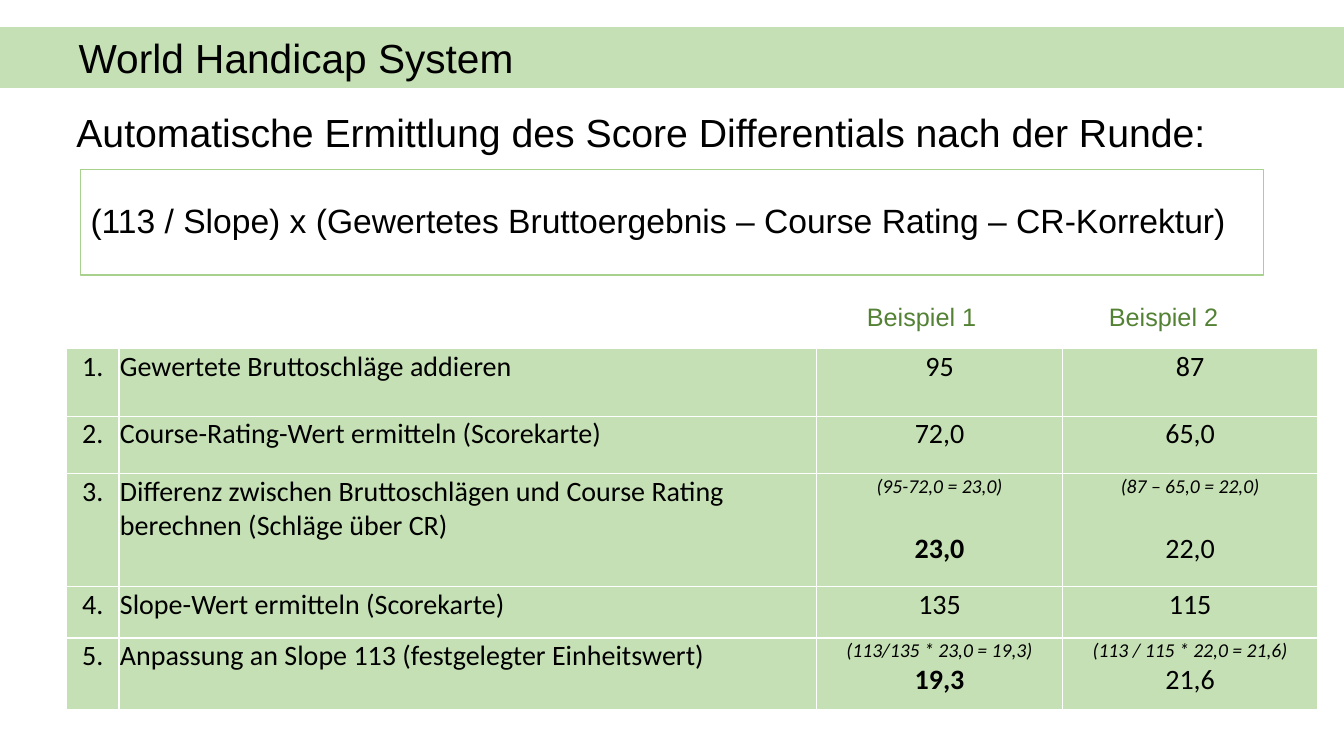
"""Build the World Handicap System slide with the score differential table."""
import dataclasses

import pptx
import pptx.dml.color
import pptx.enum.shapes
import pptx.enum.text
import pptx.oxml
import pptx.oxml.ns
import pptx.util

Inches = pptx.util.Inches
Pt = pptx.util.Pt
ALIGN = pptx.enum.text.PP_ALIGN
ANCHOR = pptx.enum.text.MSO_ANCHOR


@dataclasses.dataclass(frozen=True)
class Theme:
    heading_font: str = "Arial"
    table_font: str = "Calibri"
    black: str = "000000"
    white: str = "FFFFFF"
    pale_green: str = "C5E0B4"
    frame_green: str = "A9D18E"
    dark_green: str = "548235"
    title: int = 29
    heading: int = 28
    formula: int = 24
    label: int = 18
    cell: int = 20
    note: int = 14


THEME = Theme()

COLUMNS = [0.52, 6.92, 2.44, 2.53]
ROW_HEIGHTS = [0.67, 0.57, 1.12, 0.51, 0.71]
STEPS = [
    ("Gewertete Bruttoschläge addieren", "95", "87"),
    ("Course-Rating-Wert ermitteln (Scorekarte)", "72,0", "65,0"),
    ("Differenz zwischen Bruttoschlägen und Course Rating berechnen (Schläge über CR)",
     "23,0", "22,0"),
    ("Slope-Wert ermitteln (Scorekarte)", "135", "115"),
    ("Anpassung an Slope 113 (festgelegter Einheitswert)", "19,3", "21,6"),
]
NOTES = {
    3: ("(95-72,0 = 23,0)", "(87 – 65,0 = 22,0)"),
    5: ("(113/135 * 23,0 = 19,3)", "(113 / 115 * 22,0 = 21,6)"),
}
NOTE_GAPS = {3: 24, 5: 0}


def rgb(value):
    """Return a colour from its hex value."""
    return pptx.dml.color.RGBColor.from_string(value)


def add_run(p, text, size, font, color=THEME.black, bold=False, italic=False):
    """Add one formatted run to a paragraph."""
    r = p.add_run()
    r.text = text
    r.font.size = Pt(size)
    r.font.name = font
    r.font.color.rgb = rgb(color)
    r.font.bold = bold
    r.font.italic = italic


def add_line(tf, text, size, color=THEME.black):
    """Write the single heading-font line of a text frame."""
    tf.word_wrap = True
    p = tf.paragraphs[0]
    p.alignment = ALIGN.LEFT
    p.line_spacing = 0.9
    add_run(p, text, size, THEME.heading_font, color)


def add_text(s, box, text, size, color=THEME.black):
    """Add a text box with one line."""
    sp = s.shapes.add_textbox(*map(Inches, box))
    add_line(sp.text_frame, text, size, color)


def add_box(s, box, text, size, line, width, fill=None):
    """Add a rectangle with one vertically centred line and return it."""
    sp = s.shapes.add_shape(pptx.enum.shapes.MSO_SHAPE.RECTANGLE, *map(Inches, box))
    sp.shadow.inherit = False
    if fill:
        sp.fill.solid()
        sp.fill.fore_color.rgb = rgb(fill)
    else:
        sp.fill.background()
    sp.line.color.rgb = rgb(line)
    sp.line.width = Pt(width)
    sp.text_frame.vertical_anchor = ANCHOR.MIDDLE
    add_line(sp.text_frame, text, size)
    return sp


def style_cell(cell):
    """Give a cell its borders, fill and narrow margins."""
    props = cell._tc.get_or_add_tcPr()
    for side in ("lnL", "lnR", "lnT", "lnB"):
        props.append(pptx.oxml.parse_xml(
            f'<a:{side} {pptx.oxml.ns.nsdecls("a")} w="12700"><a:solidFill>'
            f'<a:srgbClr val="{THEME.white}"/></a:solidFill></a:{side}>'))
    cell.fill.solid()
    cell.fill.fore_color.rgb = rgb(THEME.pale_green)
    cell.margin_left = cell.margin_right = cell.margin_top = Inches(0.01)
    cell.margin_bottom = 0


def fill_cell(cell, text, align=ALIGN.CENTER, note=None, gap=0, bold=False):
    """Write a cell value, below a small italic calculation if there is one."""
    style_cell(cell)
    tf = cell.text_frame
    p = tf.paragraphs[0]
    if note:
        p.alignment = align
        add_run(p, note, THEME.note, THEME.table_font, italic=True)
        p = tf.add_paragraph()
        p.space_before = Pt(gap)
    p.alignment = align
    add_run(p, text, THEME.cell, THEME.table_font, bold=bold)


def add_steps_table(s, left, top):
    """Add the table of calculation steps with both examples."""
    size = Inches(sum(COLUMNS)), Inches(sum(ROW_HEIGHTS))
    table = s.shapes.add_table(len(STEPS), len(COLUMNS), Inches(left), Inches(top), *size).table
    table.first_row = table.horz_banding = False
    for column, width in zip(table.columns, COLUMNS):
        column.width = Inches(width)
    for row, height in zip(table.rows, ROW_HEIGHTS):
        row.height = Inches(height)
    for number, (step, *values) in enumerate(STEPS, 1):
        cells = table.rows[number - 1].cells
        fill_cell(cells[0], f"{number}.")
        fill_cell(cells[1], step, ALIGN.LEFT)
        notes = NOTES.get(number, (None, None))
        for i, (value, note) in enumerate(zip(values, notes)):
            fill_cell(cells[i + 2], value, note=note, gap=NOTE_GAPS.get(number, 0),
                      bold=bool(note) and i == 0)


def main():
    """Build and save the slide."""
    prs = pptx.Presentation()
    prs.slide_width, prs.slide_height = Inches(13.33), Inches(7.5)
    s = prs.slides.add_slide(prs.slide_layouts[6])
    band = add_box(s, (0, 0.27, 13.33, 0.6), "World Handicap System", THEME.title,
                   THEME.pale_green, 0.75, THEME.pale_green)
    band.text_frame.margin_left = Inches(0.78)
    band.text_frame.margin_top = Inches(0.1)
    add_text(s, (0.66, 1.08, 12.4, 0.6),
             "Automatische Ermittlung des Score Differentials nach der Runde:", THEME.heading)
    add_box(s, (0.8, 1.68, 11.73, 1.05),
            "(113 / Slope) x (Gewertetes Bruttoergebnis – Course Rating – CR-Korrektur)",
            THEME.formula, THEME.frame_green, 1)
    for i in range(2):
        add_text(s, (8.5 + 2.4 * i, 2.97, 1.5, 0.38), f"Beispiel {i + 1}",
                 THEME.label, THEME.dark_green)
    add_steps_table(s, 0.66, 3.46)
    prs.save("out.pptx")


if __name__ == "__main__":
    main()
